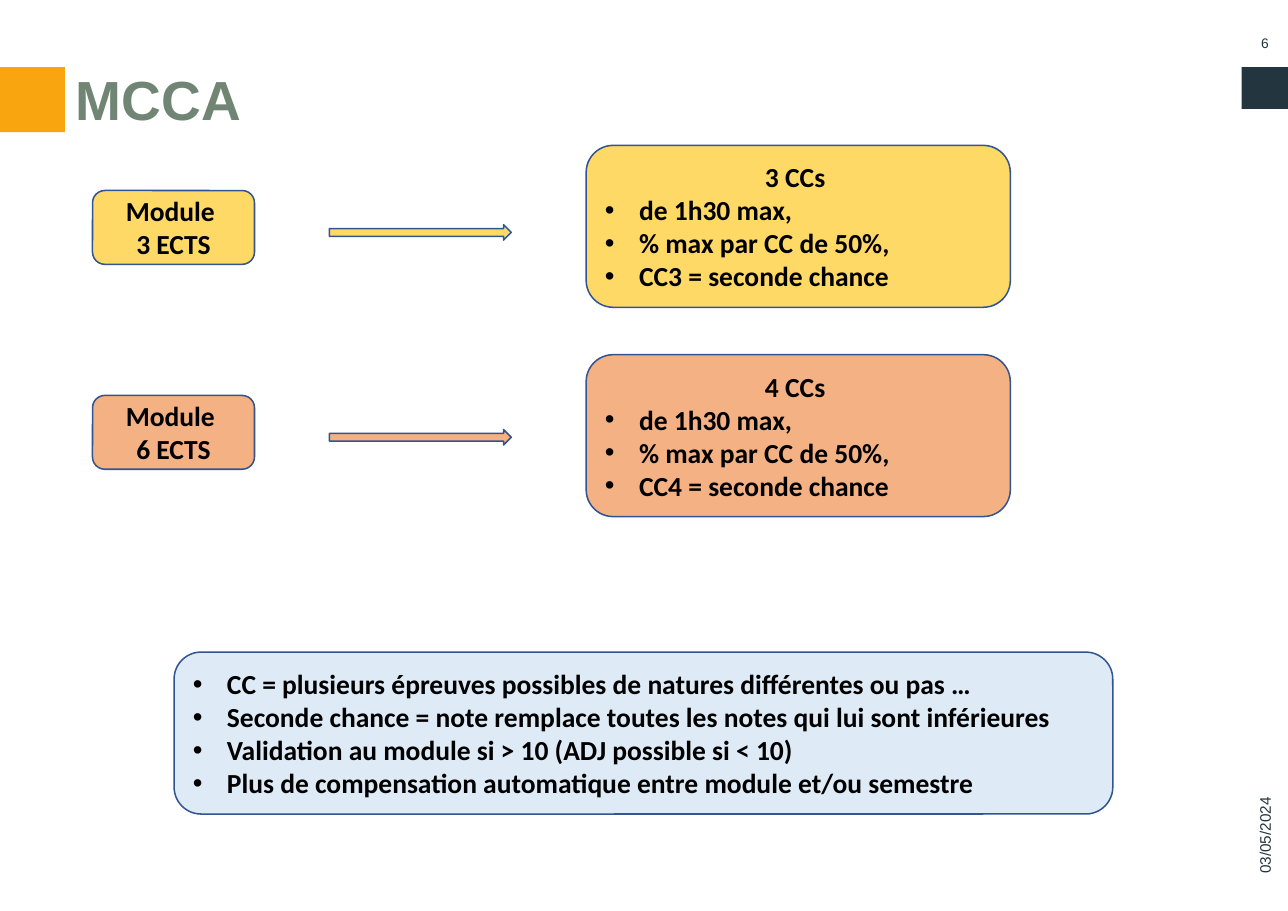
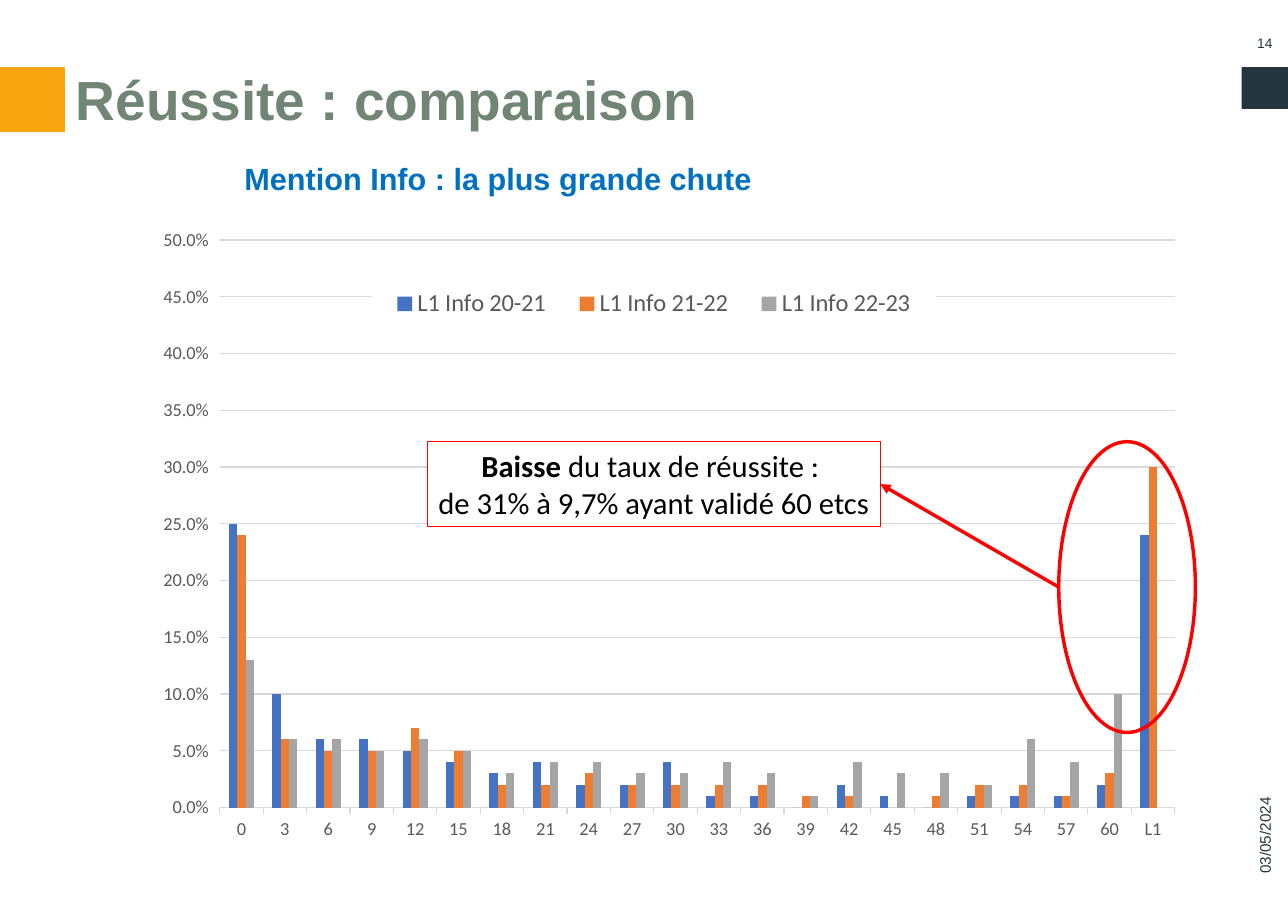
import dataclasses

import lxml.etree
import pptx
import pptx.chart.data
import pptx.dml.color
import pptx.enum.chart
import pptx.enum.shapes
import pptx.enum.text
import pptx.oxml
import pptx.oxml.ns
import pptx.util

SCALE = 9144
SHAPES = pptx.enum.shapes.MSO_SHAPE
ALIGN = pptx.enum.text.PP_ALIGN
ANCHOR = pptx.enum.text.MSO_ANCHOR
qn = pptx.oxml.ns.qn


@dataclasses.dataclass(frozen=True)
class Theme:
    heading_font: str = "Arial"
    body_font: str = "Calibri"
    orange: str = "F9A50F"
    dark: str = "23353E"
    green: str = "708573"
    blue: str = "0070C0"
    outline: str = "325491"
    yellow: str = "FFD966"
    salmon: str = "F4B183"
    pale_blue: str = "DEEBF7"
    red: str = "FF0000"
    white: str = "FFFFFF"
    black: str = "000000"
    grid: str = "D9D9D9"
    axis_text: str = "595959"
    series: tuple = ("4472C4", "ED7D31", "A5A5A5")
    title_size: int = 36
    large_size: int = 20
    body_size: int = 18
    legend_size: int = 16
    axis_size: int = 12
    date_size: int = 10
    number_size: int = 9


THEME = Theme()

CATEGORIES = [str(credits) for credits in range(0, 61, 3)] + ["L1"]
SUCCESS_RATES = {
    "L1 Info 20-21": [0.25, 0.1, 0.06, 0.06, 0.05, 0.04, 0.03, 0.04, 0.02, 0.02, 0.04,
                      0.01, 0.01, 0, 0.02, 0.01, 0, 0.01, 0.01, 0.01, 0.02, 0.24],
    "L1 Info 21-22": [0.24, 0.06, 0.05, 0.05, 0.07, 0.05, 0.02, 0.02, 0.03, 0.02, 0.02,
                      0.02, 0.02, 0.01, 0.01, 0, 0.01, 0.02, 0.02, 0.01, 0.03, 0.3],
    "L1 Info 22-23": [0.13, 0.06, 0.06, 0.05, 0.06, 0.05, 0.03, 0.04, 0.04, 0.03, 0.03,
                      0.04, 0.03, 0.01, 0.04, 0.03, 0.03, 0.02, 0.06, 0.04, 0.1, None],
}


def px(*lengths):
    return [pptx.util.Emu(length * SCALE) for length in lengths]


def rgb(color):
    return pptx.dml.color.RGBColor.from_string(color)


def style_font(font, name, size, color, bold=False):
    font.name = name
    font.size = pptx.util.Pt(size)
    font.color.rgb = rgb(color)
    font.bold = bold


def style_line(line, color, width):
    line.color.rgb = rgb(color)
    line.width = pptx.util.Pt(width)


def add_box(slide, kind, box, fill=None, outline=None, width=1):
    shape = slide.shapes.add_shape(kind, *px(*box))
    shape.shadow.inherit = False
    if fill:
        shape.fill.solid()
        shape.fill.fore_color.rgb = rgb(fill)
    else:
        shape.fill.background()
    if outline:
        style_line(shape.line, outline, width)
    else:
        shape.line.fill.background()
    return shape


def add_label(slide, box, text, size, color, bold=False, align=ALIGN.LEFT,
              anchor=ANCHOR.TOP, insets=(10, 5), wrap=True):
    shape = slide.shapes.add_textbox(*px(*box))
    frame = shape.text_frame
    frame.word_wrap = wrap
    frame.vertical_anchor = anchor
    frame.margin_left, frame.margin_top = px(*insets)
    frame.margin_right, frame.margin_bottom = px(*insets)
    paragraph = frame.paragraphs[0]
    paragraph.text = text
    paragraph.alignment = align
    style_font(paragraph.font, THEME.heading_font, size, color, bold)
    return shape


def add_bullet(paragraph):
    properties = paragraph._p.get_or_add_pPr()
    indent, = px(31)
    properties.set("marL", str(indent))
    properties.set("indent", str(-indent))
    lxml.etree.SubElement(properties, qn("a:buFont")).set("typeface", "Arial")
    lxml.etree.SubElement(properties, qn("a:buChar")).set("char", "•")


def add_card(slide, box, fill, heading=(), bullets=()):
    shape = add_box(slide, SHAPES.ROUNDED_RECTANGLE, box, fill, THEME.outline)
    frame = shape.text_frame
    frame.word_wrap = True
    frame.vertical_anchor = ANCHOR.MIDDLE
    for index, text in enumerate([*heading, *bullets]):
        paragraph = frame.add_paragraph() if index else frame.paragraphs[0]
        paragraph.text = text
        if index < len(heading):
            paragraph.alignment = ALIGN.CENTER
        else:
            paragraph.alignment = ALIGN.LEFT
            add_bullet(paragraph)
        style_font(paragraph.font, THEME.body_font, THEME.body_size, THEME.black, True)


def add_base_slide(presentation, title, number):
    slide = presentation.slides.add_slide(presentation.slide_layouts[6])
    add_box(slide, SHAPES.RECTANGLE, (0, 61, 59, 59), THEME.orange)
    add_box(slide, SHAPES.RECTANGLE, (1127, 61, 42, 38), THEME.dark)
    add_label(slide, (1127, 17, 42, 44), number, THEME.number_size, THEME.dark,
              align=ALIGN.CENTER, anchor=ANCHOR.MIDDLE, insets=(11, 6))
    heading = add_label(slide, (59, 61, 1025, 132), title, THEME.title_size,
                        THEME.green, bold=True)
    heading.text_frame.paragraphs[0].line_spacing = 0.9
    date = add_label(slide, (1099, 741, 98, 42), "03/05/2024", THEME.date_size,
                     THEME.dark, align=ALIGN.RIGHT, anchor=ANCHOR.MIDDLE, insets=(11, 6))
    date.rotation = 270
    return slide


def add_module_row(slide, credits, tests, fill, module_top, rules_top):
    add_card(slide, (84, module_top, 147, 67), fill, ["Module ", f"{credits} ECTS"])
    add_box(slide, SHAPES.RIGHT_ARROW, (299, module_top + 31, 165, 14), fill, THEME.outline)
    add_card(slide, (532, rules_top, 385, 147), fill, [f"{tests} CCs "],
             ["de 1h30 max,", "% max par CC de 50%,", f"CC{tests} = seconde chance"])


def make_layout(left, top, width, height, inner=False):
    layout = lxml.etree.Element(qn("c:layout"))
    manual = lxml.etree.SubElement(layout, qn("c:manualLayout"))
    entries = [("layoutTarget", "inner")] if inner else []
    entries += [("xMode", "edge"), ("yMode", "edge"),
                ("x", left), ("y", top), ("w", width), ("h", height)]
    for name, value in entries:
        lxml.etree.SubElement(manual, qn(f"c:{name}")).set("val", str(value))
    return layout


def place_chart_part(element, index, layout):
    for old in element.findall(qn("c:layout")):
        element.remove(old)
    element.insert(index, layout)


def style_legend(chart):
    chart.has_legend = True
    legend = chart.legend
    legend.position = pptx.enum.chart.XL_LEGEND_POSITION.BOTTOM
    legend.include_in_layout = False
    style_font(legend.font, THEME.body_font, THEME.legend_size, THEME.axis_text)
    place_chart_part(legend._element, 1, make_layout(0.24, 0.15, 0.52, 0.06))
    properties = lxml.etree.Element(qn("c:spPr"))
    fill = lxml.etree.SubElement(properties, qn("a:solidFill"))
    lxml.etree.SubElement(fill, qn("a:srgbClr")).set("val", THEME.white)
    legend._element.find(qn("c:overlay")).addnext(properties)


def style_axes(chart):
    for axis in (chart.category_axis, chart.value_axis):
        axis.major_tick_mark = pptx.enum.chart.XL_TICK_MARK.OUTSIDE
        style_font(axis.tick_labels.font, THEME.body_font, THEME.axis_size, THEME.axis_text)
    style_line(chart.category_axis.format.line, THEME.grid, 0.75)
    values = chart.value_axis
    values.format.line.fill.background()
    values.minimum_scale, values.maximum_scale, values.major_unit = 0, 0.5, 0.05
    values.has_major_gridlines = True
    style_line(values.major_gridlines.format.line, THEME.grid, 0.75)
    values.tick_labels.number_format = "0.0%"
    values.tick_labels.number_format_is_linked = False


def add_success_chart(slide):
    data = pptx.chart.data.CategoryChartData(number_format="0.0%")
    data.categories = CATEGORIES
    for name, rates in SUCCESS_RATES.items():
        data.add_series(name, rates)
    chart = slide.shapes.add_chart(pptx.enum.chart.XL_CHART_TYPE.COLUMN_CLUSTERED,
                                   *px(101, 160, 985, 644), data).chart
    chart.has_title = False
    style_font(chart.font, THEME.body_font, THEME.date_size, THEME.black)
    plot = chart.plots[0]
    plot.gap_width, plot.overlap, plot.vary_by_categories = 219, 0, False
    for series, color in zip(plot.series, THEME.series):
        series.format.fill.solid()
        series.format.fill.fore_color.rgb = rgb(color)
    style_axes(chart)
    style_legend(chart)
    plot_area = chart._chartSpace.chart.plotArea
    place_chart_part(plot_area, 0, make_layout(0.1, 0.09, 0.88, 0.8, inner=True))


def add_callout(slide):
    callout = add_box(slide, SHAPES.RECTANGLE, (388, 401, 411, 77),
                      THEME.white, THEME.red, 0.75)
    frame = callout.text_frame
    frame.word_wrap = False
    frame.vertical_anchor = ANCHOR.TOP
    lines = [[("Baisse", True), (" du taux de réussite : ", False)],
             [("de 31% à 9,7% ayant validé 60 etcs", False)]]
    for index, runs in enumerate(lines):
        paragraph = frame.add_paragraph() if index else frame.paragraphs[0]
        paragraph.alignment = ALIGN.CENTER
        style_font(paragraph.font, THEME.body_font, THEME.large_size, THEME.black)
        for text, bold in runs:
            run = paragraph.add_run()
            run.text = text
            run.font.bold = bold
    return callout


def add_callout_arrow(slide, callout, start, end):
    connector = slide.shapes.add_connector(pptx.enum.shapes.MSO_CONNECTOR.STRAIGHT,
                                           *px(*start, *end))
    connector.begin_connect(callout, 3)
    style_line(connector.line, THEME.red, 2.25)
    line = connector.line._get_or_add_ln()
    lxml.etree.SubElement(line, qn("a:headEnd")).set("type", "triangle")
    lxml.etree.SubElement(connector._element.spPr, qn("a:effectLst"))


def build_rules_slide(presentation):
    slide = add_base_slide(presentation, "MCCA", "6")
    add_module_row(slide, 3, 3, THEME.yellow, 173, 132)
    add_module_row(slide, 6, 4, THEME.salmon, 359, 322)
    add_card(slide, (158, 592, 852, 147), THEME.pale_blue, bullets=[
        "CC = plusieurs épreuves possibles de natures différentes ou pas …",
        "Seconde chance = note remplace toutes les notes qui lui sont inférieures",
        "Validation au module si > 10 (ADJ possible si < 10)",
        "Plus de compensation automatique entre module et/ou semestre",
    ])


def build_comparison_slide(presentation):
    slide = add_base_slide(presentation, "Réussite : comparaison", "14")
    add_success_chart(slide)
    add_label(slide, (212, 140, 492, 44), "Mention Info : la plus grande chute",
              THEME.large_size, THEME.blue, bold=True, wrap=False)
    add_box(slide, SHAPES.OVAL, (961, 401, 124, 264), outline=THEME.red, width=2.25)
    callout = add_callout(slide)
    add_callout_arrow(slide, callout, (799, 440), (961, 533))


def main():
    presentation = pptx.Presentation()
    presentation.slide_width, presentation.slide_height = px(1169, 827)
    build_rules_slide(presentation)
    build_comparison_slide(presentation)
    presentation.save("out.pptx")


if __name__ == "__main__":
    main()
